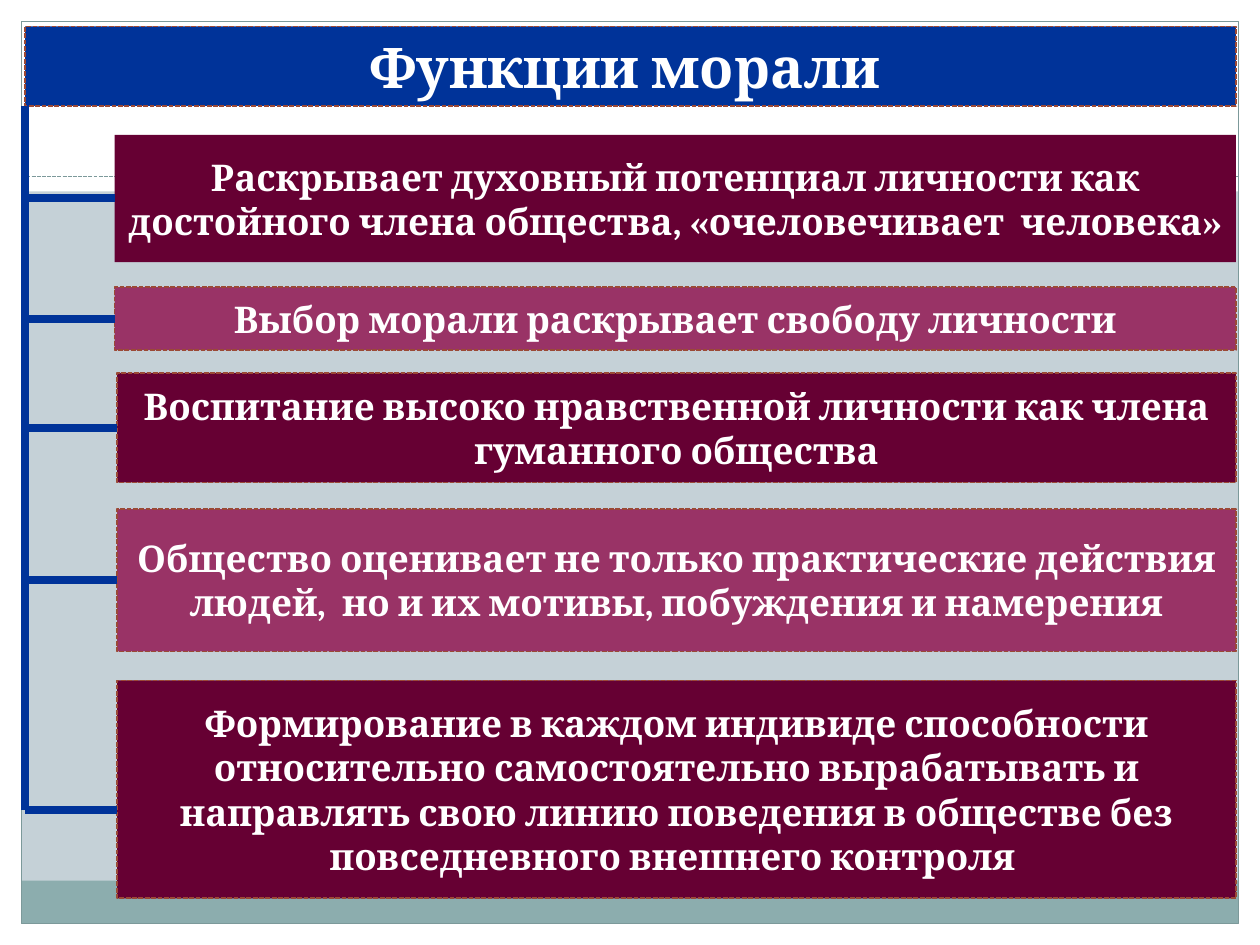
import pptx
import pptx.util
import pptx.dml.color
import pptx.enum.dml
import pptx.enum.shapes
import pptx.enum.text
import pptx.oxml.ns
import lxml.etree

COLUMNS, ROWS = 1000, 750
BLUE, WINE, PLUM = "003399", "660033", "993366"
WHITE, TEAL, BORDER, RUST = "FFFFFF", "8CADAE", "7C999A", "9B4936"
PAGE = (0, 0, COLUMNS, ROWS)
HEADING = (20, 21, 961, 63)
LIST = (20, 84, 961, 629)
FUNCTIONS = [
    (71, 23, 101, WINE, False,
     "Раскрывает духовный потенциал личности как достойного члена общества, «очеловечивает  человека»"),
    (71, 144, 50, PLUM, True, "Выбор морали раскрывает свободу личности"),
    (73, 212, 87, WINE, True,
     "Воспитание высоко нравственной личности как члена гуманного общества"),
    (73, 320, 113, PLUM, True,
     "Общество оценивает не только практические действия людей,  но и их мотивы, побуждения и намерения"),
    (73, 456, 173, WINE, True,
     "Формирование в каждом индивиде способности относительно самостоятельно вырабатывать "
     "и направлять свою линию поведения в обществе без повседневного внешнего контроля "),
]
STEM_LENGTH = 559

deck = pptx.Presentation()
deck.slide_width = pptx.util.Inches(10)
deck.slide_height = pptx.util.Inches(7.5)


def across(columns):
    return round(deck.slide_width * columns / COLUMNS)


def down(rows):
    return round(deck.slide_height * rows / ROWS)


def place(box):
    left, top, width, height = box
    return across(left), down(top), across(width), down(height)


def color(value):
    return pptx.dml.color.RGBColor.from_string(value)


def paint(fill, value):
    fill.solid()
    fill.fore_color.rgb = color(value)


def stroke(line, value, width, dashed=False):
    line.color.rgb = color(value)
    line.width = pptx.util.Pt(width)
    if dashed:
        line.dash_style = pptx.enum.dml.MSO_LINE.SQUARE_DOT


def add_panel(slide, box, fill=None):
    panel = slide.shapes.add_shape(pptx.enum.shapes.MSO_SHAPE.RECTANGLE, *place(box))
    panel.shadow.inherit = False
    panel.line.fill.background()
    if fill:
        paint(panel.fill, fill)
    else:
        panel.fill.background()
    return panel


def add_rule(slide, start, end, value, width, dashed=False):
    rule = slide.shapes.add_connector(
        pptx.enum.shapes.MSO_CONNECTOR.STRAIGHT,
        across(start[0]), down(start[1]), across(end[0]), down(end[1]))
    stroke(rule.line, value, width, dashed)
    properties = rule.element.find(pptx.oxml.ns.qn("p:spPr"))
    lxml.etree.SubElement(properties, pptx.oxml.ns.qn("a:effectLst"))


def write(panel, text, size):
    frame = panel.text_frame
    frame.text = text
    frame.word_wrap = True
    frame.auto_size = pptx.enum.text.MSO_AUTO_SIZE.NONE
    frame.vertical_anchor = pptx.enum.text.MSO_ANCHOR.MIDDLE
    paragraph = frame.paragraphs[0]
    paragraph.alignment = pptx.enum.text.PP_ALIGN.CENTER
    paragraph.font.name = "Cambria"
    paragraph.font.size = pptx.util.Pt(size)
    paragraph.font.bold = True
    paragraph.font.color.rgb = color(WHITE)


def add_frame(slide, box):
    left, top, width, height = box
    margin, header, footer = 17, 152, 34
    right, bottom = left + width - margin, top + height - margin
    inner = width - 2 * margin
    paint(slide.background.fill, "C5D1D7")
    for band in [(left, bottom, width, margin), (left, top, width, header),
                 (left, top, margin, height), (right, top, margin, height)]:
        add_panel(slide, band, WHITE)
    add_panel(slide, (left + margin, bottom - footer, inner, footer), TEAL)
    border = add_panel(slide, (left + margin, top + margin, inner, height - 2 * margin))
    stroke(border.line, BORDER, 0.75)
    divider = top + 140
    add_rule(slide, (left + margin, divider), (right, divider), BORDER, 0.75, True)


def add_heading(slide, box, text):
    heading = slide.shapes.title
    heading.left, heading.top, heading.width, heading.height = place(box)
    paint(heading.fill, BLUE)
    stroke(heading.line, RUST, 0.9, True)
    write(heading, text, 32)
    heading.element.getparent().append(heading.element)


def add_functions(slide, box):
    left, top, width, _ = box
    stem_end = top + STEM_LENGTH
    branches = []
    for indent, offset, height, fill, outlined, text in FUNCTIONS:
        panel = add_panel(slide, (left + indent, top + offset, width - indent, height), fill)
        if outlined:
            stroke(panel.line, RUST, 0.9, True)
        write(panel, text, 21)
        branches.append((left + indent, top + offset + height / 2))
    branches[-1] = (branches[-1][0], stem_end)
    add_rule(slide, (left, top), (left, stem_end), BLUE, 4.5)
    for end, level in branches:
        add_rule(slide, (left, level), (end, level), BLUE, 4.5)


def main():
    slide = deck.slides.add_slide(deck.slide_layouts[5])
    add_frame(slide, PAGE)
    add_heading(slide, HEADING, "Функции морали ")
    add_functions(slide, LIST)
    deck.save("out.pptx")


if __name__ == "__main__":
    main()
